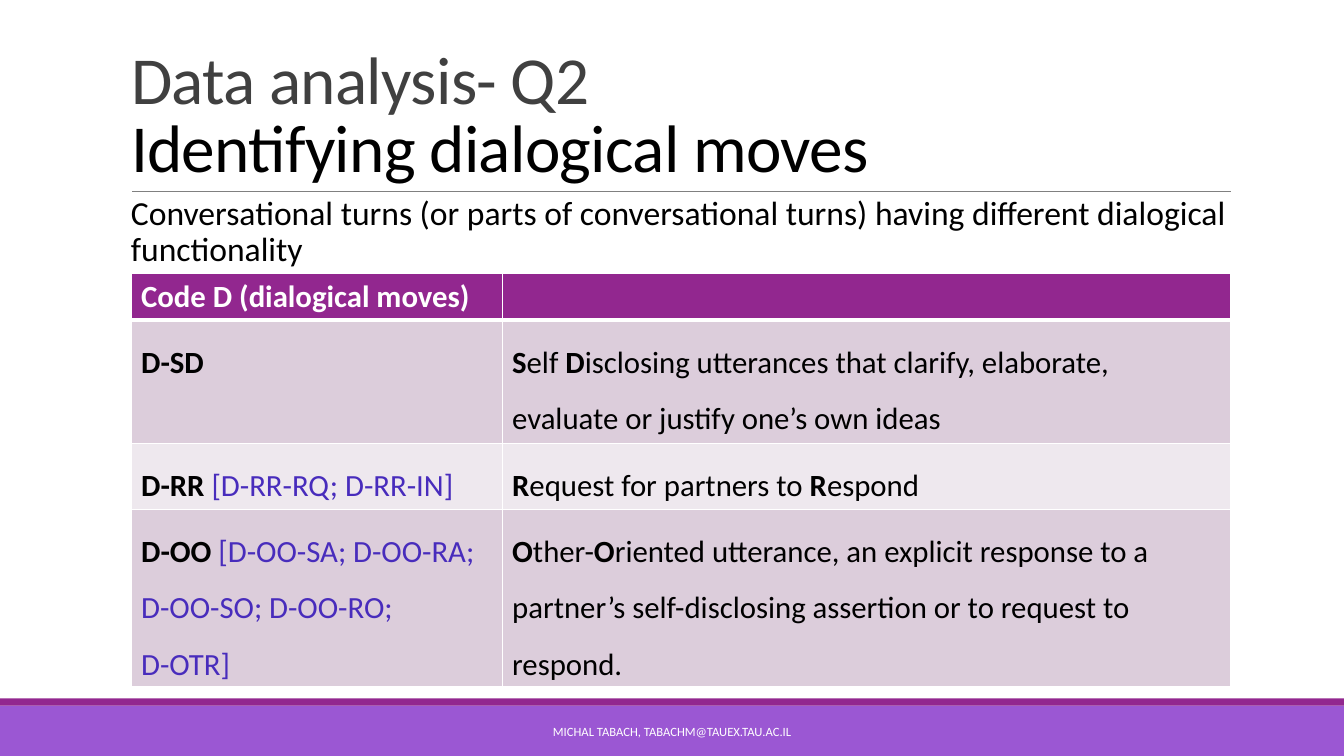
from dataclasses import dataclass

from pptx import Presentation
from pptx import util as u
from pptx.dml.color import RGBColor
from pptx.enum import shapes, text
from pptx.oxml import ns
from lxml import etree


@dataclass(frozen=True)
class Theme:
    font: str = "Calibri"
    purple: str = "92278F"
    violet: str = "9B57D3"
    rule: str = "808080"
    title: str = "404040"
    black: str = "000000"
    white: str = "FFFFFF"
    codes: str = "482CBC"
    bands: tuple = ("DCCDDB", "EEE8EE")
    title_size: int = 48
    body_size: int = 24
    table_size: int = 22
    footer_size: int = 9


THEME = Theme()

# Double asterisks enclose bold text; square brackets enclose sub-codes.
MOVES = [
    ("**Code D (dialogical moves)**", ""),
    ("**D-SD**",
     "**S**elf **D**isclosing utterances that clarify, elaborate, "
     "evaluate or justify one’s own ideas"),
    ("**D-RR **[D-RR-RQ; D-RR-IN]", "**R**equest for partners to **R**espond"),
    ("**D-OO **[D-OO-SA; D-OO-RA; D-OO-SO; D-OO-RO; \nD-OTR]",
     "**O**ther-**O**riented utterance, an explicit response to a "
     "partner’s self-disclosing assertion or to request to respond."),
]
COLUMN_WIDTHS = (3.68, 7.23)
ROW_HEIGHTS = (0.46, 1.22, 0.66, 1.76)


def inches(*lengths):
    return [u.Inches(length) for length in lengths]


def style_run(run, size, color, bold=False):
    run.font.name = THEME.font
    run.font.size = u.Pt(size)
    run.font.bold = bold
    run.font.color.rgb = RGBColor.from_string(color)


def add_bar(slide, top, height, color):
    bar = slide.shapes.add_shape(
        shapes.MSO_SHAPE.RECTANGLE, *inches(0, top, 13.33, height))
    bar.shadow.inherit = False
    bar.fill.solid()
    bar.fill.fore_color.rgb = RGBColor.from_string(color)
    bar.line.fill.background()


def add_rule(slide, left, right, top):
    rule = slide.shapes.add_connector(
        shapes.MSO_CONNECTOR.STRAIGHT, *inches(left, top, right, top))
    rule.line.color.rgb = RGBColor.from_string(THEME.rule)
    rule.line.width = u.Pt(0.5)
    etree.SubElement(rule._element.spPr, ns.qn("a:effectLst"))


def format_title(title):
    title.left, title.top, title.width, title.height = inches(1.2, 0.31, 11, 1.59)
    frame = title.text_frame
    frame.text = "Data analysis- Q2 \vIdentifying dialogical moves"
    frame.vertical_anchor = text.MSO_ANCHOR.BOTTOM
    frame.auto_size = text.MSO_AUTO_SIZE.NONE
    paragraph = frame.paragraphs[0]
    paragraph.alignment = text.PP_ALIGN.LEFT
    paragraph.line_spacing = 0.85
    for run, color in zip(paragraph.runs, (THEME.title, THEME.black)):
        style_run(run, THEME.title_size, color)
        run.font._element.set("spc", "-50")


def add_text(slide, box, words, size, color):
    frame = slide.shapes.add_textbox(*inches(*box)).text_frame
    frame.word_wrap = True
    frame.text = words
    style_run(frame.paragraphs[0].runs[0], size, color)
    return frame


def fill_paragraph(paragraph, markup, color):
    for index, part in enumerate(markup.split("**")):
        part_color = THEME.codes if part.startswith("[") else color
        for number, line in enumerate(part.split("\n")):
            if number:
                paragraph.add_line_break()
            if line:
                run = paragraph.add_run()
                run.text = line
                style_run(run, THEME.table_size, part_color, index % 2 == 1)


def set_borders(cell, widths):
    properties = cell._tc.get_or_add_tcPr()
    for index, (side, width) in enumerate(widths.items()):
        line = etree.Element(ns.qn(f"a:ln{side}"), w=str(u.Pt(width)))
        fill = etree.SubElement(line, ns.qn("a:solidFill"))
        etree.SubElement(fill, ns.qn("a:srgbClr"), val=THEME.white)
        properties.insert(index, line)


def add_moves_table(slide):
    table = slide.shapes.add_table(
        len(MOVES), len(COLUMN_WIDTHS),
        *inches(1.3, 2.71, sum(COLUMN_WIDTHS), sum(ROW_HEIGHTS))).table
    for column, width in zip(table.columns, COLUMN_WIDTHS):
        column.width = u.Inches(width)
    for row_index, (row, height) in enumerate(zip(table.rows, ROW_HEIGHTS)):
        row.height = u.Inches(height)
        header = row_index == 0
        background = THEME.purple if header else THEME.bands[(row_index - 1) % 2]
        for cell, markup in zip(row.cells, MOVES[row_index]):
            cell.fill.solid()
            cell.fill.fore_color.rgb = RGBColor.from_string(background)
            set_borders(cell, {"L": 1, "R": 1, "T": 3 if row_index == 1 else 1,
                               "B": 3 if header else 1})
            paragraph = cell.text_frame.paragraphs[0]
            paragraph.line_spacing = 1.0 if header else 1.5
            fill_paragraph(paragraph, markup, THEME.white if header else THEME.black)


def main():
    presentation = Presentation()
    presentation.slide_width, presentation.slide_height = inches(13.33, 7.5)
    slide = presentation.slides.add_slide(presentation.slide_layouts[5])

    # Bottom band and title rule
    add_bar(slide, 7, 0.5, THEME.violet)
    add_bar(slide, 6.93, 0.07, THEME.purple)
    add_rule(slide, 1.31, 12.21, 1.9)

    # Title and introduction
    format_title(slide.shapes.title)
    introduction = add_text(
        slide, (1.2, 1.9, 11, 0.8),
        "Conversational turns (or parts of conversational turns) "
        "having different dialogical functionality",
        THEME.body_size, THEME.black)
    introduction.margin_right = 0
    introduction.paragraphs[0].line_spacing = 0.9

    # Dialogical moves
    add_moves_table(slide)

    # Footer
    footer = add_text(slide, (4.03, 7.06, 5.27, 0.4),
                      "MICHAL TABACH, TABACHM@TAUEX.TAU.AC.IL",
                      THEME.footer_size, THEME.white)
    footer.vertical_anchor = text.MSO_ANCHOR.MIDDLE
    footer.paragraphs[0].alignment = text.PP_ALIGN.CENTER

    presentation.save("out.pptx")


if __name__ == "__main__":
    main()
